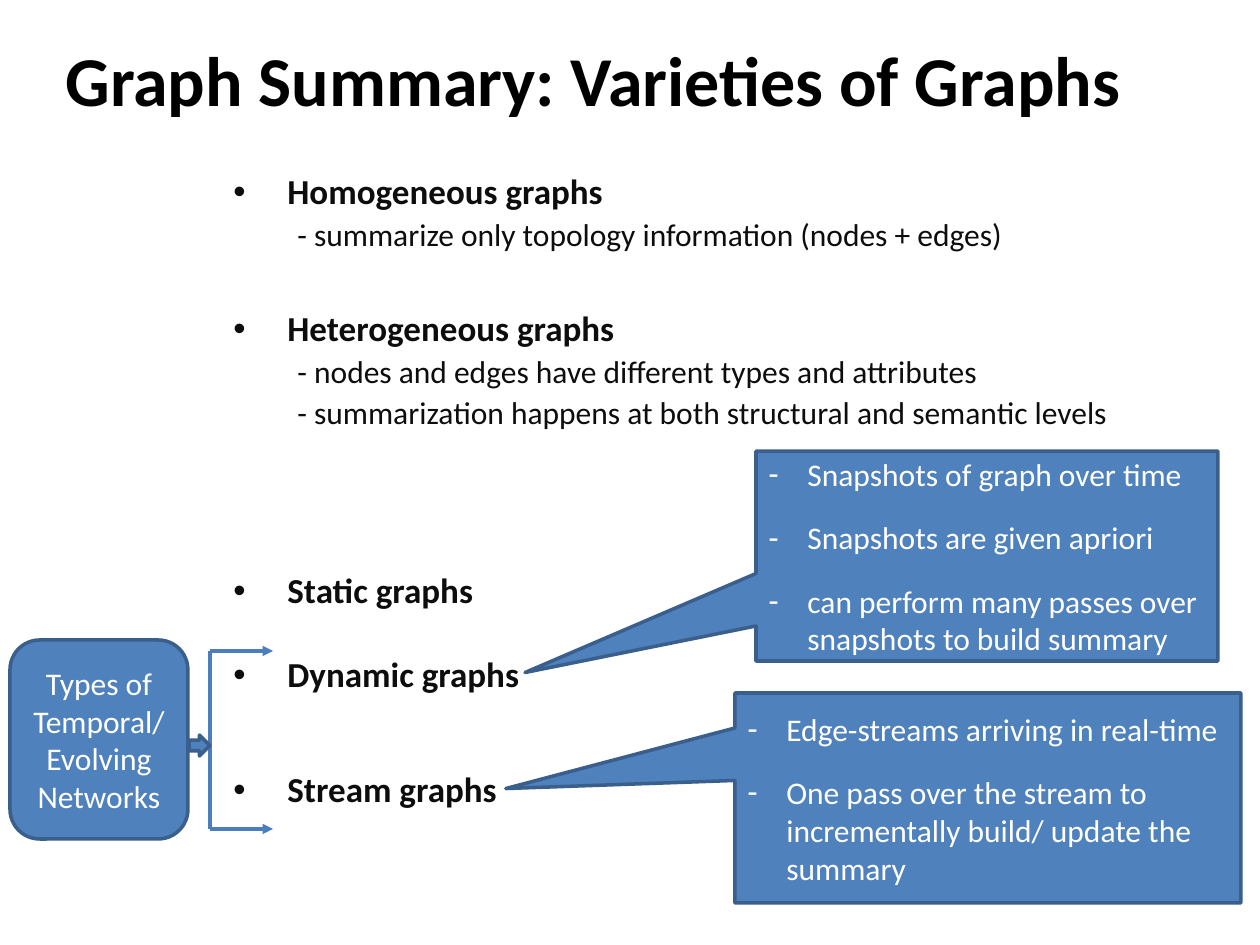
import pptx
import pptx.util
import pptx.dml.color
import pptx.enum.dml
import pptx.enum.shapes
import pptx.enum.text
import lxml.etree
from dataclasses import dataclass
from pptx.enum.shapes import MSO_SHAPE
from pptx.enum.text import MSO_ANCHOR, PP_ALIGN
from pptx.oxml.ns import qn

PX = 914400 / 126


@dataclass(frozen=True)
class Theme:
    font: str = "Calibri"
    title: int = 40
    heading: int = 20
    body: int = 18
    black: str = "000000"
    ink: str = "0D0D0D"
    white: str = "FFFFFF"
    fill: str = "4F81BD"
    outline: str = "3A5F8C"
    line: str = "4B7EBC"


theme = Theme()


def px(*lengths):
    return [pptx.util.Emu(round(length * PX)) for length in lengths]


def style(paragraph, size, color, bold=False, bullet=None, margin=0, hanging=0):
    """Set bullet and indents (px) first, then the paragraph's font."""
    properties = paragraph._p.get_or_add_pPr()
    properties.set("marL", str(px(margin)[0]))
    properties.set("indent", str(px(-hanging)[0]))
    if bullet:
        lxml.etree.SubElement(properties, qn("a:buFont")).set("typeface", "Arial")
        lxml.etree.SubElement(properties, qn("a:buChar")).set("char", bullet)
    paragraph.font.name = theme.font
    paragraph.font.size = pptx.util.Pt(size)
    paragraph.font.bold = bold
    paragraph.font.color.rgb = pptx.dml.color.RGBColor.from_string(color)


presentation = pptx.Presentation()
presentation.slide_width, presentation.slide_height = px(1260, 945)
slide = presentation.slides.add_slide(presentation.slide_layouts[5])

title = slide.shapes.title
title.left, title.top, title.width, title.height = px(53, 42, 1124, 73)
title.text_frame.text = "Graph Summary: Varieties of Graphs"
title.text_frame.auto_size = pptx.enum.text.MSO_AUTO_SIZE.NONE
title.text_frame.vertical_anchor = MSO_ANCHOR.MIDDLE
title.text_frame.paragraphs[0].alignment = PP_ALIGN.LEFT
style(title.text_frame.paragraphs[0], theme.title, theme.black, bold=True)

# Graph varieties: top of the box, heading, details
varieties = [
    (168, "Homogeneous graphs", ["- summarize only topology information (nodes + edges)"]),
    (305, "Heterogeneous graphs", [
        "- nodes and edges have different types and attributes",
        "- summarization happens at both structural and semantic levels",
    ]),
    (567, "Static graphs", []),
    (651, "Dynamic graphs", []),
    (766, "Stream graphs", []),
]
for top, heading, details in varieties:
    box = slide.shapes.add_textbox(*px(221, top, 966, 168))
    frame = box.text_frame
    frame.word_wrap = True
    frame.text = "\n".join([heading, *details])
    for paragraph in frame.paragraphs:
        paragraph.line_spacing = 0.9
    style(frame.paragraphs[0], theme.heading, theme.ink, bold=True,
          bullet="•", margin=54, hanging=54)
    for paragraph in frame.paragraphs[1:]:
        paragraph.space_before = pptx.util.Pt(4)
        style(paragraph, theme.body, theme.ink, margin=64)

# Bracket from the temporal networks to the dynamic and stream graphs
bracket_left, bracket_right, bracket_top, bracket_bottom = 210, 273, 651, 829
bracket = [
    (bracket_left, bracket_top, bracket_left, bracket_bottom, False),
    (bracket_left, bracket_top, bracket_right, bracket_top, True),
    (bracket_left, bracket_bottom, bracket_right, bracket_bottom, True),
]
for *ends, has_arrow in bracket:
    connector = slide.shapes.add_connector(
        pptx.enum.shapes.MSO_CONNECTOR.STRAIGHT, *px(*ends))
    connector.line.color.rgb = pptx.dml.color.RGBColor.from_string(theme.line)
    connector.line.width = pptx.util.Pt(1.75)
    if has_arrow:
        line = connector.line._get_or_add_ln()
        lxml.etree.SubElement(line, qn("a:tailEnd")).set("type", "triangle")
    lxml.etree.SubElement(connector._element.spPr, qn("a:effectLst"))

# Filled shapes: kind, place, adjustments, bullet, paragraphs
filled_shapes = [
    (MSO_SHAPE.ROUNDED_RECTANGLE, (10, 640, 178, 199), [], None,
     ["Types of Temporal/ Evolving Networks"]),
    (MSO_SHAPE.RIGHT_ARROW, (189, 735, 21, 21), [], None, []),
    (MSO_SHAPE.RECTANGULAR_CALLOUT, (756, 451, 462, 210), [-1, 0.555], "-", [
        "Snapshots of graph over time",
        "Snapshots are given apriori",
        "can perform many passes over snapshots to build summary",
    ]),
    (MSO_SHAPE.RECTANGULAR_CALLOUT, (735, 693, 506, 210), [-0.953, -0.045], "-", [
        "Edge-streams arriving in real-time",
        "One pass over the stream to incrementally build/ update the summary",
    ]),
]
for kind, place, adjustments, bullet, texts in filled_shapes:
    shape = slide.shapes.add_shape(kind, *px(*place))
    shape.shadow.inherit = False
    shape.fill.solid()
    shape.fill.fore_color.rgb = pptx.dml.color.RGBColor.from_string(theme.fill)
    shape.line.color.rgb = pptx.dml.color.RGBColor.from_string(theme.outline)
    shape.line.width = pptx.util.Pt(2)
    for index, value in enumerate(adjustments):
        shape.adjustments[index] = value
    if not texts:
        continue
    frame = shape.text_frame
    frame.word_wrap = True
    frame.vertical_anchor = MSO_ANCHOR.MIDDLE
    frame.text = "\n".join(texts)
    indent = 39 if bullet else 0
    for index, paragraph in enumerate(frame.paragraphs):
        paragraph.alignment = PP_ALIGN.LEFT if bullet else PP_ALIGN.CENTER
        if index:
            paragraph.space_before = pptx.util.Pt(14.6)
        style(paragraph, theme.body, theme.white,
              bullet=bullet, margin=indent, hanging=indent)

presentation.save("out.pptx")
